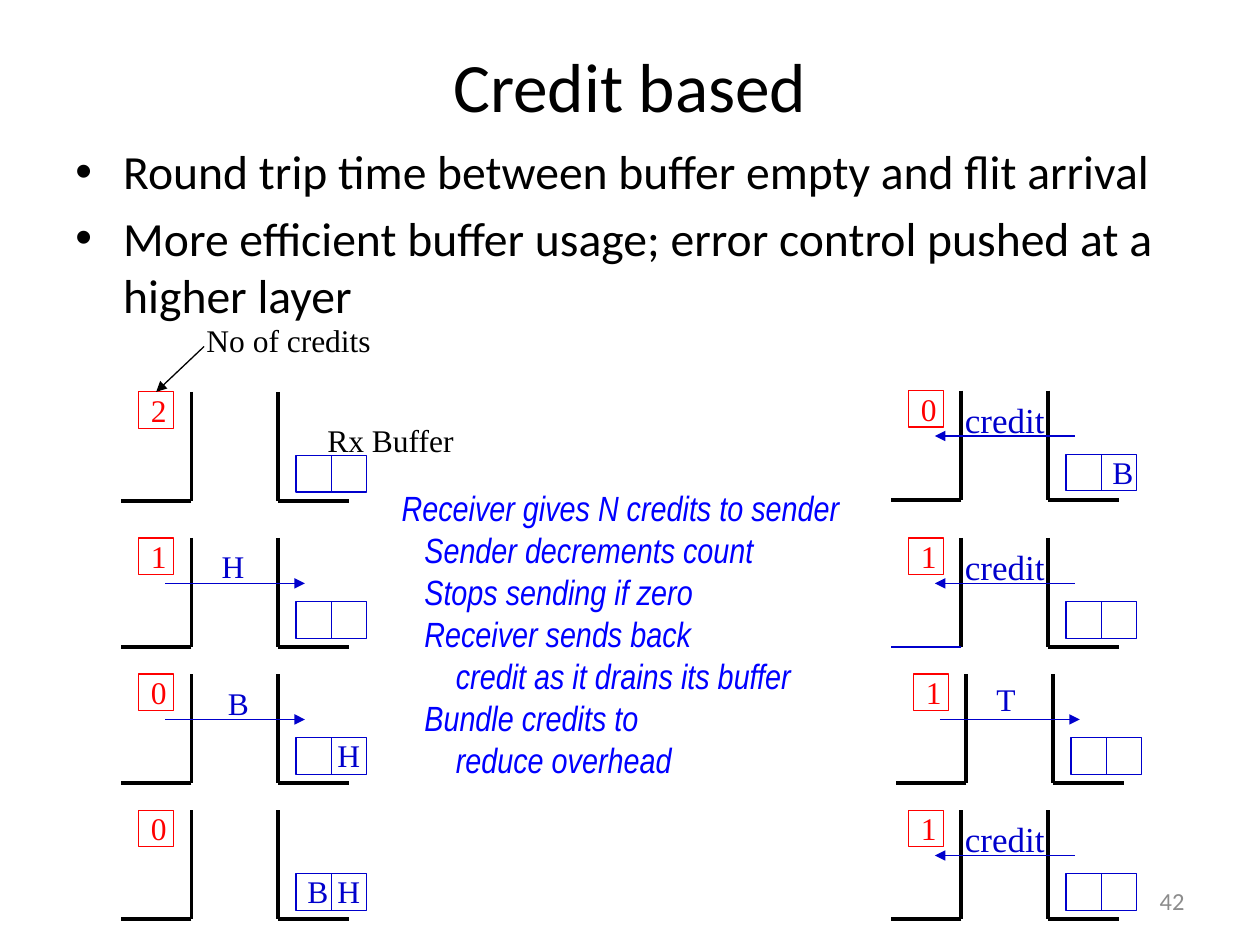
import lxml.etree
import pptx
import pptx.dml.color
import pptx.enum.shapes
import pptx.enum.text
import pptx.oxml.ns
import pptx.util

prs = pptx.Presentation()
prs.slide_width, prs.slide_height = pptx.util.Inches(10), pptx.util.Inches(7.5)
col, row = prs.slide_width / 100, prs.slide_height / 75
s = prs.slides.add_slide(prs.slide_layouts[6])
shapes = s.shapes
qn = pptx.oxml.ns.qn
rgb = pptx.dml.color.RGBColor.from_string
align = pptx.enum.text.PP_ALIGN
anchor = pptx.enum.text.MSO_ANCHOR
BLACK, RED, BLUE = "000000", "FF0000", "0000CC"


def write(x, y, w, h, paragraphs, color, size=18, name="Times New Roman",
          italic=False, alignment=align.LEFT, **frame):
    sp = shapes.add_textbox(int(x * col), int(y * row), int(w * col), int(h * row))
    tf = sp.text_frame
    for key, value in {"word_wrap": False, **frame}.items():
        setattr(tf, key, value)
    font = {"size": pptx.util.Pt(size), "name": name, "italic": italic}
    for i, text in enumerate(paragraphs):
        p = tf.paragraphs[0] if i == 0 else tf.add_paragraph()
        p.alignment = alignment
        r = p.add_run()
        r.text = text
        for key, value in font.items():
            setattr(r.font, key, value)
        r.font.color.rgb = rgb(color)
    return tf


def draw_line(x1, y1, x2, y2, color=BLACK, width=2.25, arrow=False):
    sp = shapes.add_connector(pptx.enum.shapes.MSO_CONNECTOR.STRAIGHT,
                              int(x1 * col), int(y1 * row), int(x2 * col), int(y2 * row))
    sp.line.color.rgb = rgb(color)
    sp.line.width = pptx.util.Pt(width)
    if arrow:
        lxml.etree.SubElement(sp.line._get_or_add_ln(), qn("a:tailEnd"), type="triangle")
    lxml.etree.SubElement(sp._element.spPr, qn("a:effectLst"))
    return sp


write(5, 3, 90, 7.4, ["Credit based"], BLACK, 39.6, "Calibri",
      alignment=align.CENTER, word_wrap=True, vertical_anchor=anchor.MIDDLE)
tf = write(5, 10.8, 90, 14.6, [
    "Round trip time between buffer empty and flit arrival",
    "More efficient buffer usage; error control pushed at a higher layer",
], BLACK, 27.2, "Calibri", word_wrap=True)
for p in tf.paragraphs:
    p.space_before = pptx.util.Pt(5.4)
    pPr = p._p.get_or_add_pPr()
    pPr.set("marL", str(int(3.8 * col)))
    pPr.set("indent", str(int(-3.8 * col)))
    lxml.etree.SubElement(pPr, qn("a:buFont"), typeface="Arial")
    lxml.etree.SubElement(pPr, qn("a:buChar"), char="•")
write(71.7, 69.5, 23.3, 4, ["42"], "8C8C8C", 14, "Calibri",
      alignment=align.RIGHT, vertical_anchor=anchor.MIDDLE)

credit = ("credit", 3.5, 0.1, 10, 20)
panels = [
    (11, 31.1, "2", None, []),
    (11, 42.7, "1", ("H", 5.6, 0.2, 3.8, 18), []),
    (11, 53.5, "0", ("B", 6.1, 0.3, 3.7, 18), [("H", 14.8)]),
    (11, 64.3, "0", None, [("B", 12.4), ("H", 14.8)]),
    (72.1, 31, "0", credit, [("B", 15.2)]),
    (72.1, 42.7, "1", credit, []),
    (72.5, 53.5, "1", ("T", 5.6, 0, 3.5, 18), []),
    (72.1, 64.3, "1", credit, []),
]
credit_boxes = []
for i, (x, y, count, message, flits) in enumerate(panels):
    for dx, dy, color in [(15.3, 5.05, BLUE), (12.5, 5.05, BLUE), (0, 0, RED)]:
        sp = shapes.add_shape(pptx.enum.shapes.MSO_SHAPE.RECTANGLE, int((x + dx) * col),
                              int((y + dy) * row), int(2.8 * col), int(2.9 * row))
        sp.shadow.inherit = False
        sp.fill.background()
        sp.line.color.rgb = rgb(color)
        sp.line.width = pptx.util.Pt(0.75)
    credit_boxes.append(sp)
    floor = y + 8.65
    for wall, outer in [(4.2, -1.4), (11.1, 16.7)]:
        thin = i == 5 and outer < 0
        draw_line(x + wall, y, x + wall, floor)
        draw_line(x + wall, floor, x + outer, floor,
                  BLUE if thin else BLACK, 0.75 if thin else 2.25)
    write(x, y - 0.55, 3.3, 4, [count], RED)
    if message:
        text, dx, dy, w, size = message
        start, end = (13.2, 2.1) if message is credit else (2.1, 13.2)
        draw_line(x + start, y + 3.6, x + end, y + 3.6, BLUE, 0.75, True)
        write(x + dx, y + dy, w, 4, [text], BLUE, size)
    for flit, dx in flits:
        write(x + dx, y + 4.45, 3.8, 4, [flit], BLUE)

write(15.4, 25, 15.1, 4, ["No of credits"], BLACK)
draw_line(16.2, 27.5, 12.5, 30.8, BLACK, 0.75, True).end_connect(credit_boxes[0], 0)
write(25, 32.9, 12.1, 4, ["Rx Buffer"], BLACK)

steps = [
    ("Receiver gives N credits to sender", 3.2),
    ("Sender decrements count", 5),
    ("Stops sending if zero", 5),
    ("Receiver sends back", 5),
    ("credit as it drains its buffer", 7.5),
    ("Bundle credits to", 5),
    ("reduce overhead", 7.5),
]
tf = write(27.7, 38.1, 46.4, 31.6, [text for text, _ in steps], "0000FF", 20,
           "Arial Narrow", True, word_wrap=True)
for p, (_, margin) in zip(tf.paragraphs, steps):
    p._p.get_or_add_pPr().set("marL", str(int(margin * col)))

prs.save("out.pptx")
